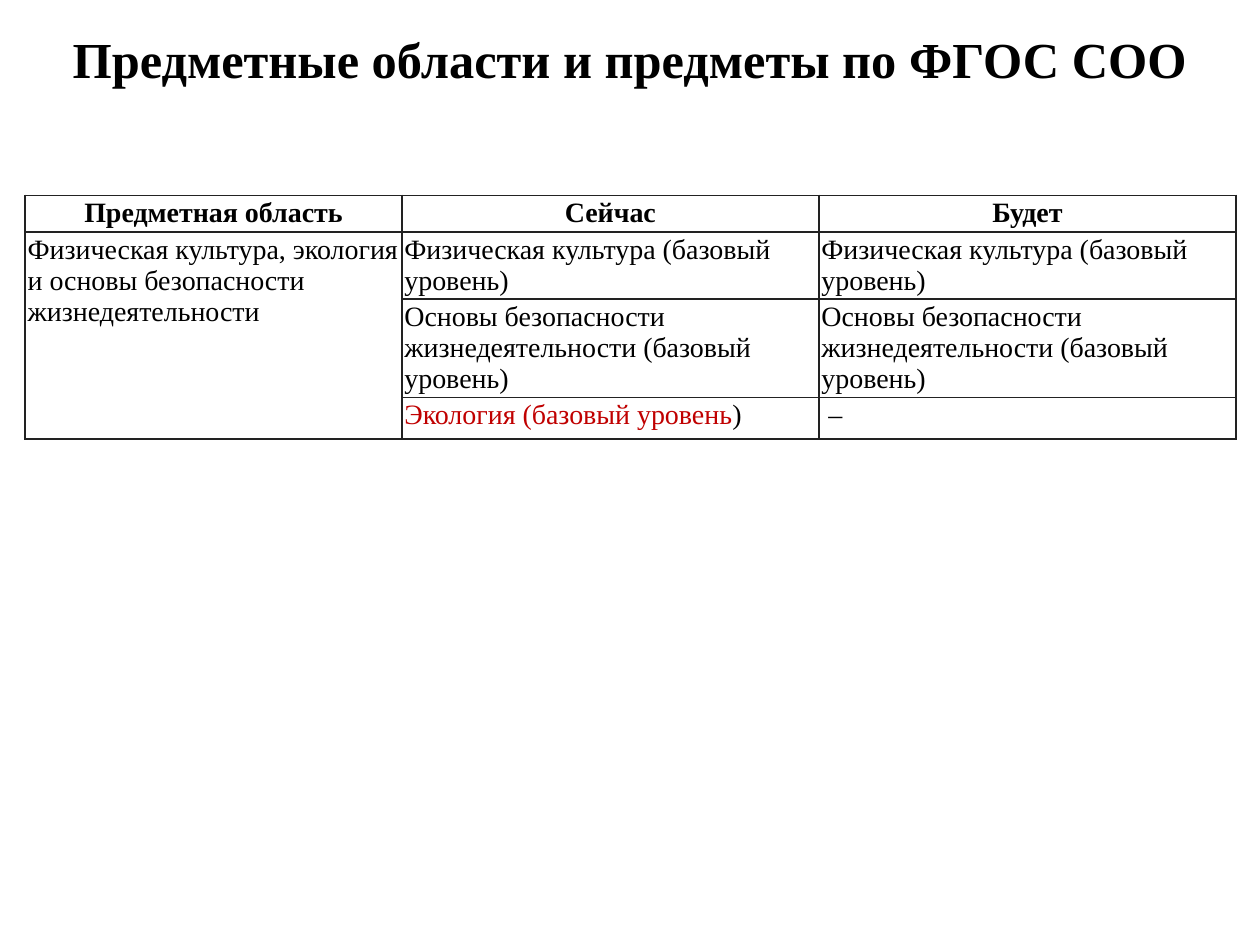
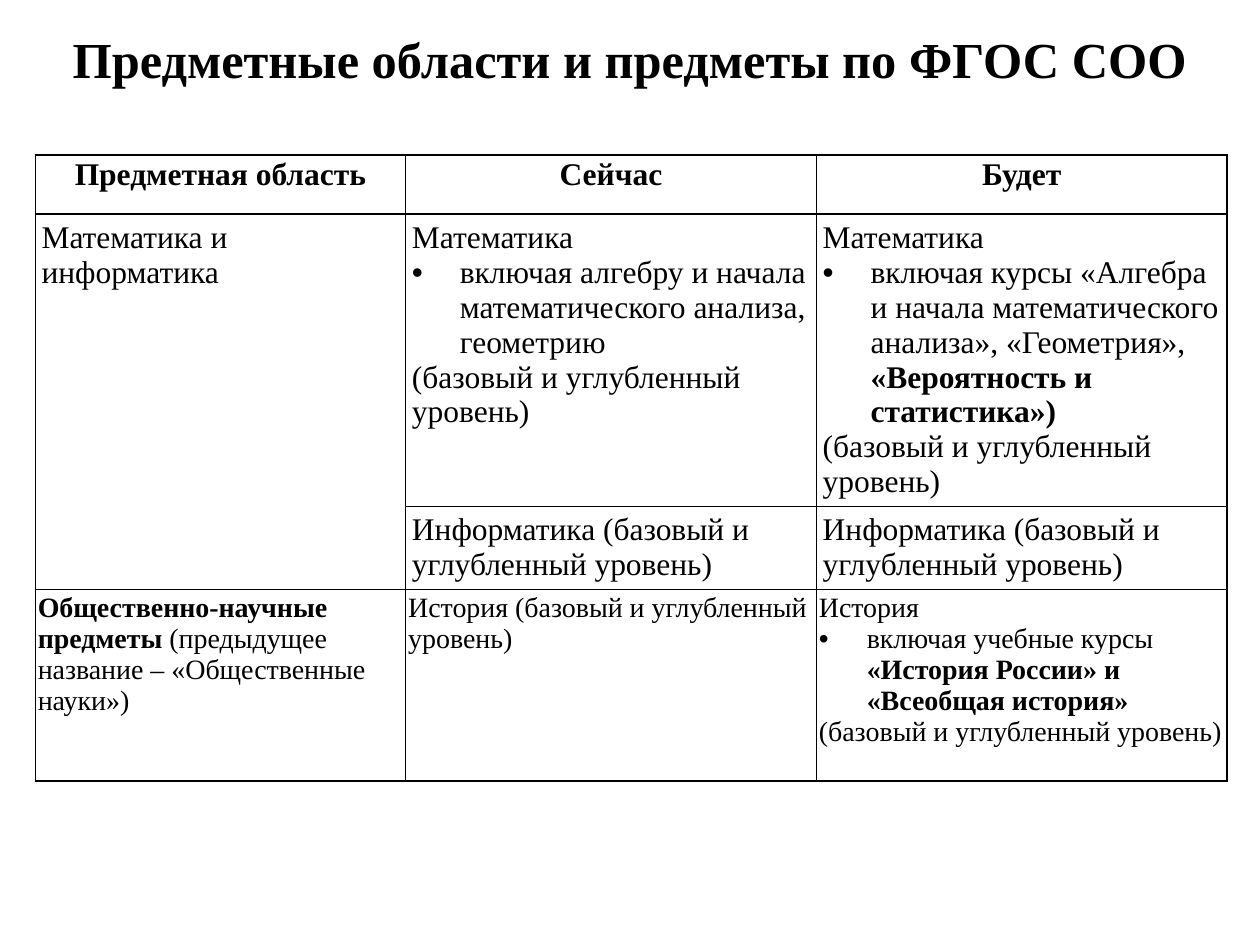
from lxml.etree import SubElement as Sub
from pptx import Presentation
from pptx.dml.color import RGBColor
from pptx.enum.text import MSO_ANCHOR as Anchor, PP_ALIGN as Align
from pptx.oxml.ns import qn
from pptx.util import Inches, Pt

FACE = "Times New Roman"
BLACK, WHITE, GREY, RED = "000000", "FFFFFF", "222222", "C00000"
TITLE = "Предметные области и предметы по ФГОС СОО"
HEAD = ["Предметная область", "Сейчас", "Будет"]
BULLET = "• "


def paint(code):
    return RGBColor.from_string(code)


def style(run, size, bold=False, color=BLACK):
    for key, value in {"name": FACE, "size": Pt(size), "bold": bold}.items():
        setattr(run.font, key, value)
    run.font.color.rgb = paint(color)


def add_title(slide):
    title = slide.shapes.title
    box = {"left": 0, "top": 0, "width": 10, "height": 0.92}
    for key, value in box.items():
        setattr(title, key, Inches(value))
    frame = title.text_frame
    frame.vertical_anchor = Anchor.MIDDLE
    para = frame.paragraphs[0]
    para.alignment = Align.CENTER
    run = para.add_run()
    run.text = TITLE
    style(run, 28.8, bold=True)


def add_bullet(para):
    props = para._p.get_or_add_pPr()
    props.set("marL", str(Inches(0.38)))
    props.set("indent", str(-Inches(0.38)))
    Sub(props, qn("a:buFont"), typeface="Arial")
    Sub(props, qn("a:buChar"), char="•")


def add_border(cell, color):
    props = cell._tc.get_or_add_tcPr()
    for side in ("lnL", "lnR", "lnT", "lnB"):
        line = Sub(props, qn("a:" + side), w=str(Pt(1)))
        fill = Sub(line, qn("a:solidFill"))
        Sub(fill, qn("a:srgbClr"), val=color)


def fill_cell(cell, paras, size, pad, head):
    """Each paragraph is a string or a list of (text, format) runs."""
    for side in ("left", "right", "top", "bottom"):
        setattr(cell, "margin_" + side, Inches(pad))
    frame = cell.text_frame
    for i, item in enumerate(paras):
        para = frame.add_paragraph() if i else frame.paragraphs[0]
        para.alignment = Align.CENTER if head else Align.LEFT
        runs = [(item, {"bold": head})] if isinstance(item, str) else item
        if runs[0][0].startswith(BULLET):
            add_bullet(para)
        for text, form in runs:
            run = para.add_run()
            run.text = text.removeprefix(BULLET)
            style(run, size, **form)


def add_grid(slide, spot, cols, rows, line, merge):
    """Each row is (height, text size, cell margin, cells)."""
    left, top = spot
    high = sum(row[0] for row in rows)
    frame = slide.shapes.add_table(
        len(rows), len(cols), Inches(left), Inches(top),
        Inches(sum(cols)), Inches(high))
    table = frame.table
    table.first_row = table.horz_banding = False
    for col, wide in zip(table.columns, cols):
        col.width = Inches(wide)
    for r, (tall, size, pad, cells) in enumerate(rows):
        table.rows[r].height = Inches(tall)
        for c, paras in enumerate(cells):
            cell = table.cell(r, c)
            add_border(cell, line)
            cell.fill.solid()
            cell.fill.fore_color.rgb = paint(WHITE)
            fill_cell(cell, paras, size, pad, head=r == 0)
    first, last = merge
    table.cell(first, 0).merge(table.cell(last, 0))


def main():
    deck = Presentation()
    deck.slide_width, deck.slide_height = Inches(10), Inches(7.5)
    names = [[name] for name in HEAD]
    bold = {"bold": True}

    # Sport, ecology and safety
    sport = ["Физическая культура (базовый уровень)"]
    safe = ["Основы безопасности жизнедеятельности (базовый уровень)"]
    area = ["Физическая культура, экология и основы безопасности "
            "жизнедеятельности"]
    eco = [[("Экология (базовый уровень", {"color": RED}), (")", {})]]
    health = [
        (0.29, 16, 0.02, names),
        (0.53, 16, 0.02, [area, sport, sport]),
        (0.78, 16, 0.02, [[], safe, safe]),
        (0.33, 16, 0.02, [[], eco, [" –"]]),
    ]

    # Maths, computing and history
    level = "(базовый и углубленный уровень)"
    now = ["Математика",
           BULLET + "включая алгебру и начала математического анализа, "
           "геометрию", level]
    soon = ["Математика",
            [(BULLET + "включая курсы «Алгебра и начала математического "
              "анализа», «Геометрия», ", {}),
             ("«Вероятность и статистика»)", bold)], level]
    code = ["Информатика " + level]
    social = [[("Общественно-научные предметы ", bold),
               ("(предыдущее название – «Общественные науки»)", {})]]
    past = ["История",
            [(BULLET + "включая учебные курсы ", {}),
             ("«История России» и «Всеобщая история»", bold)], level]
    study = [
        (0.47, 18, 0.02, names),
        (2.32, 18, 0.05, [["Математика и информатика"], now, soon]),
        (0.66, 18, 0.05, [[], code, code]),
        (1.52, 16, 0.02, [social, ["История " + level], past]),
    ]

    # One slide for each table
    plans = [
        ((0.2, 1.55), (2.99, 3.31, 3.31), health, GREY, (1, 3)),
        ((0.28, 1.23), (2.94, 3.26, 3.26), study, BLACK, (1, 2)),
    ]
    for plan in plans:
        slide = deck.slides.add_slide(deck.slide_layouts[5])
        add_title(slide)
        add_grid(slide, *plan)
    deck.save("out.pptx")


if __name__ == "__main__":
    main()
